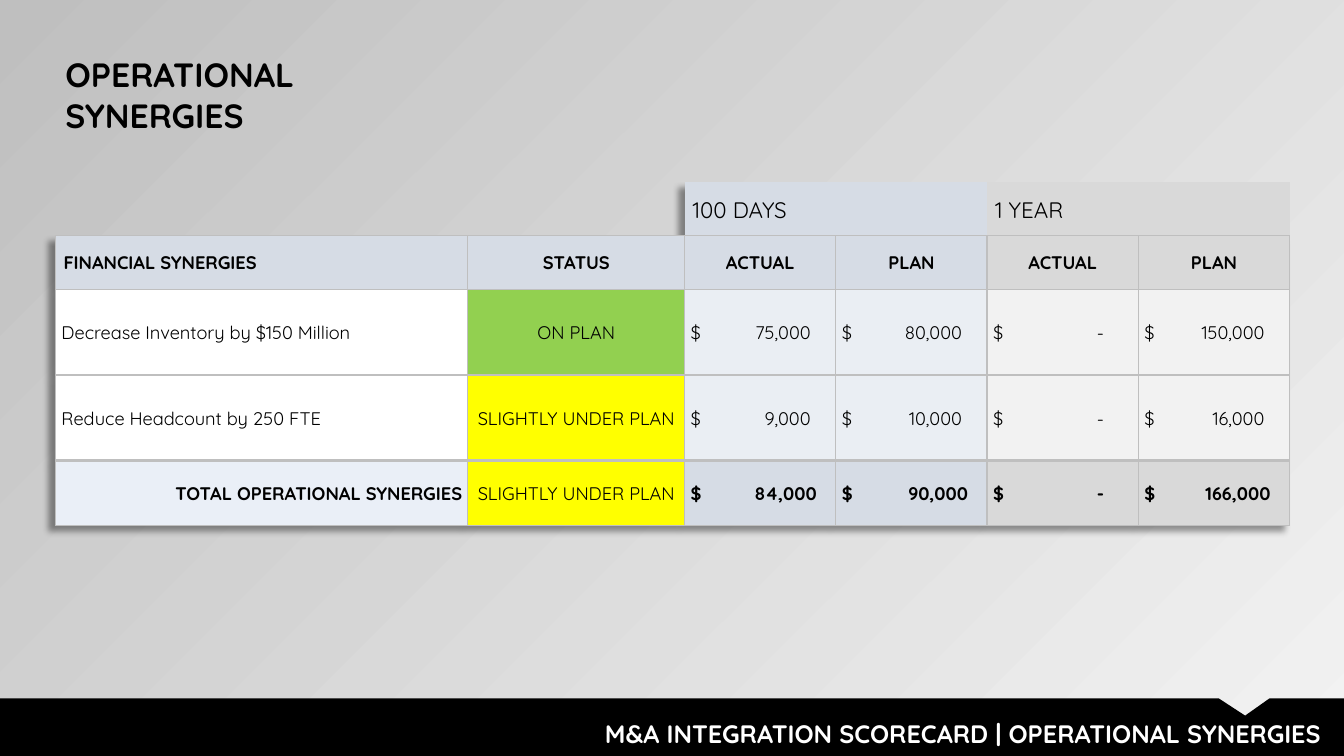
from dataclasses import dataclass

from lxml.etree import SubElement
from pptx import Presentation
from pptx.dml.color import RGBColor
from pptx.enum.text import MSO_ANCHOR, PP_ALIGN
from pptx.oxml import parse_xml
from pptx.oxml.ns import nsdecls, qn
from pptx.util import Inches, Pt


@dataclass(frozen=True)
class Theme:
    font: str = "Quicksand"
    title_size: float = 24
    footer_size: float = 18
    period_size: float = 16
    body_size: float = 13
    black: str = "000000"
    white: str = "FFFFFF"
    backdrop_light: str = "F2F2F2"
    backdrop_dark: str = "BFBFBF"
    border: str = "BFBFBF"
    blue: str = "D6DCE5"
    blue_pale: str = "EAEEF3"
    blue_total: str = "EAEFF7"
    gray: str = "D9D9D9"
    gray_pale: str = "F2F2F2"
    green: str = "92D050"
    yellow: str = "FFFF00"


theme = Theme()


def write(text_frame, text, size, color=theme.black, bold=False, align=PP_ALIGN.LEFT):
    paragraph = text_frame.paragraphs[0]
    paragraph.text = text
    paragraph.alignment = align
    paragraph.font.name = theme.font
    paragraph.font.size = Pt(size)
    paragraph.font.bold = bold
    paragraph.font.color.rgb = RGBColor.from_string(color)
    return paragraph


def set_borders(cell, widths):
    """Draw the given sides; the line elements must come before the fill."""
    properties = cell._tc.get_or_add_tcPr()
    for index, (side, width) in enumerate(widths.items()):
        properties.insert(index, parse_xml(
            f'<a:ln{side} {nsdecls("a")} w="{Pt(width)}"><a:solidFill>'
            f'<a:srgbClr val="{theme.border}"/></a:solidFill></a:ln{side}>'))


presentation = Presentation()
presentation.slide_width = Inches(13.33)
presentation.slide_height = Inches(7.5)
slide = presentation.slides.add_slide(presentation.slide_layouts[6])

# Background gradient, light at the bottom right
backdrop = slide.background.fill
backdrop.gradient()
backdrop.gradient_angle = 135
for stop, color in zip(backdrop.gradient_stops, (theme.backdrop_light, theme.backdrop_dark)):
    stop.color.rgb = RGBColor.from_string(color)

# Footer band with a notch
builder = slide.shapes.build_freeform(0, Inches(6.93))
builder.add_line_segments([(Inches(x), Inches(y)) for x, y in (
    (12.09, 6.93), (12.35, 7.1), (12.59, 6.93), (13.33, 6.93), (13.33, 7.5), (0, 7.5))])
footer_band = builder.convert_to_shape()
footer_band.shadow.inherit = False
footer_band.fill.solid()
footer_band.fill.fore_color.rgb = RGBColor.from_string(theme.black)
footer_band.line.fill.background()

# Title and footer text
for text, left, top, width, height, size, color, align in (
    ("M&A INTEGRATION SCORECARD | OPERATIONAL SYNERGIES", 4.14, 7.08, 9.06, 0.4,
     theme.footer_size, theme.white, PP_ALIGN.RIGHT),
    ("OPERATIONAL SYNERGIES", 0.55, 0.49, 4.29, 0.5,
     theme.title_size, theme.black, PP_ALIGN.LEFT),
):
    text_box = slide.shapes.add_textbox(Inches(left), Inches(top), Inches(width), Inches(height))
    text_box.text_frame.word_wrap = True
    write(text_box.text_frame, text, size, color, True, align)

# Scorecard contents
rows = (
    ("", "", "100 DAYS", "", "1 YEAR", ""),
    ("FINANCIAL SYNERGIES", "STATUS", "ACTUAL", "PLAN", "ACTUAL", "PLAN"),
    ("Decrease Inventory by $150 Million", "ON PLAN", "75,000", "80,000", "-", "150,000"),
    ("Reduce Headcount by 250 FTE", "SLIGHTLY UNDER PLAN", "9,000", "10,000", "-", "16,000"),
    ("TOTAL OPERATIONAL SYNERGIES", "SLIGHTLY UNDER PLAN", "84,000", "90,000", "-", "166,000"),
)
column_widths = (4.09, 2.15, 1.5, 1.5, 1.5, 1.5)
row_heights = (0.53, 0.53, 0.85, 0.85, 0.64)
strong_fills = [theme.blue] * 2 + [theme.gray] * 2
pale_fills = [theme.blue_pale] * 2 + [theme.gray_pale] * 2
fills = (
    [None, None] + strong_fills,
    [theme.blue, theme.blue] + strong_fills,
    [theme.white, theme.green] + pale_fills,
    [theme.white, theme.yellow] + pale_fills,
    [theme.blue_total, theme.yellow] + strong_fills,
)
PERIODS, HEADINGS, LAST_ITEM, TOTAL = 0, 1, 3, 4

# Table without style banding, with a soft shadow to the lower left
table = slide.shapes.add_table(len(rows), len(column_widths), Inches(0.55), Inches(1.81),
                               Inches(12.24), Inches(3.39)).table
table.first_row = table.horz_banding = False
table_properties = table._tbl.tblPr
table_properties.find(qn("a:tableStyleId")).text = "{2D5ABB26-0587-4C30-8999-92F81FD0307C}"
table_properties.insert(0, parse_xml(
    f'<a:effectLst {nsdecls("a")}><a:outerShdw blurRad="{Pt(4)}" dist="{Pt(6)}" dir="8100000" '
    f'algn="tr" rotWithShape="0"><a:srgbClr val="{theme.black}"><a:alpha val="40000"/>'
    '</a:srgbClr></a:outerShdw></a:effectLst>'))
for column, width in zip(table.columns, column_widths):
    column.width = Inches(width)
for row, height in zip(table.rows, row_heights):
    row.height = Inches(height)
for first in (2, 4):
    table.cell(PERIODS, first).merge(table.cell(PERIODS, first + 1))

# Cells
for r, texts in enumerate(rows):
    for c, text in enumerate(texts):
        cell = table.cell(r, c)
        if fills[r][c]:
            cell.fill.solid()
            cell.fill.fore_color.rgb = RGBColor.from_string(fills[r][c])
        else:
            cell.fill.background()
        if r == PERIODS:
            set_borders(cell, {"B": 1})
        else:
            set_borders(cell, {"L": 1, "R": 1, "T": 2.25 if r == TOTAL else 1,
                               "B": 2.25 if r == LAST_ITEM else 1})
        if not text:
            continue

        cell.vertical_anchor = MSO_ANCHOR.MIDDLE
        cell.margin_left = cell.margin_right = cell.margin_top = Inches(0.01)
        cell.margin_bottom = 0
        is_amount = r > HEADINGS and c > 1
        align = PP_ALIGN.LEFT
        if r == PERIODS or (r == HEADINGS and c == 0):
            cell.margin_left = Inches(0.08)
        elif r == TOTAL and c == 0:
            cell.margin_right = Inches(0.06)
            align = PP_ALIGN.RIGHT
        elif c == 0 or is_amount:
            cell.margin_left = Inches(0.06)
        else:
            align = PP_ALIGN.CENTER

        bold = r == HEADINGS or (r == TOTAL and c != 1)
        size = theme.period_size if r == PERIODS else theme.body_size
        paragraph = write(cell.text_frame, f"$\t{text}" if is_amount else text,
                          size, bold=bold, align=align)

        # Amounts line up on a right tab
        if is_amount:
            tab_position = 1.1 if text == "-" else 1.25 if r == TOTAL else 1.19
            tab_list = parse_xml(f'<a:tabLst {nsdecls("a")}/>')
            SubElement(tab_list, qn("a:tab"), pos=str(Inches(tab_position)), algn="r")
            paragraph._p.get_or_add_pPr().insert(0, tab_list)

presentation.save("out.pptx")
